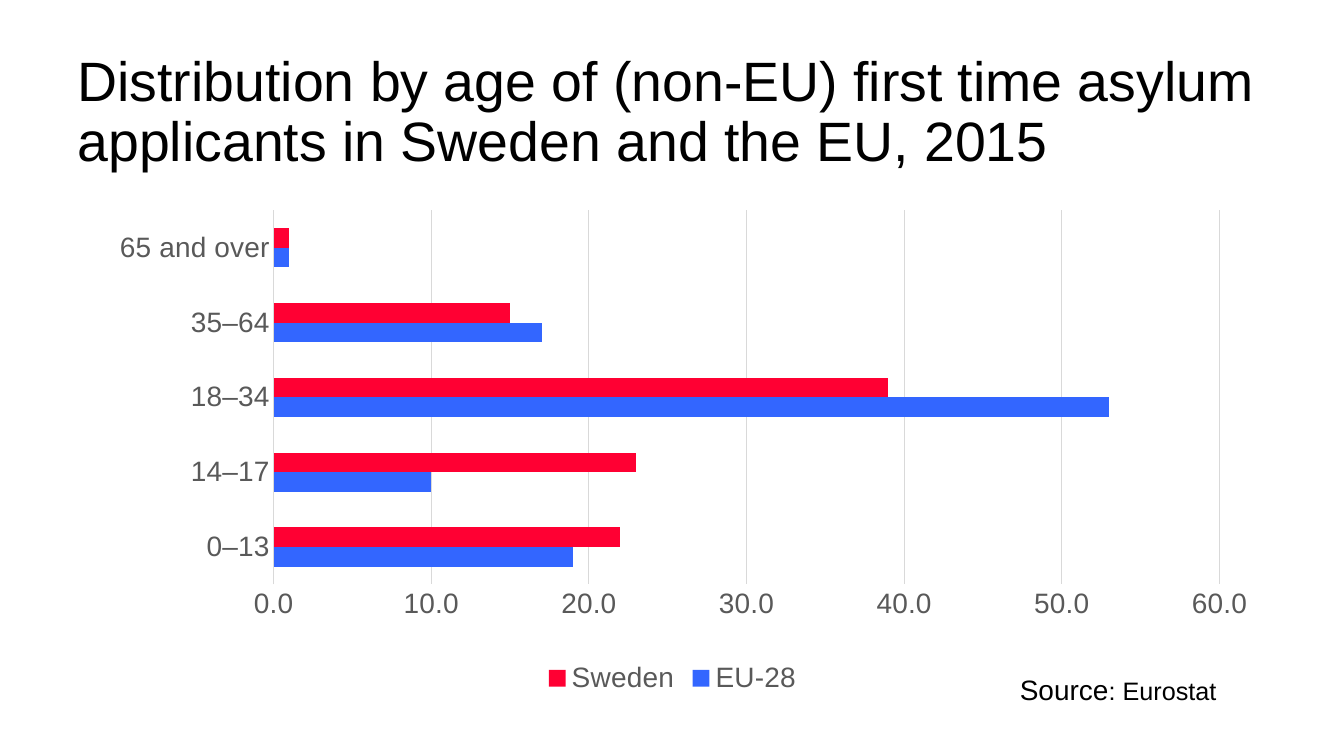
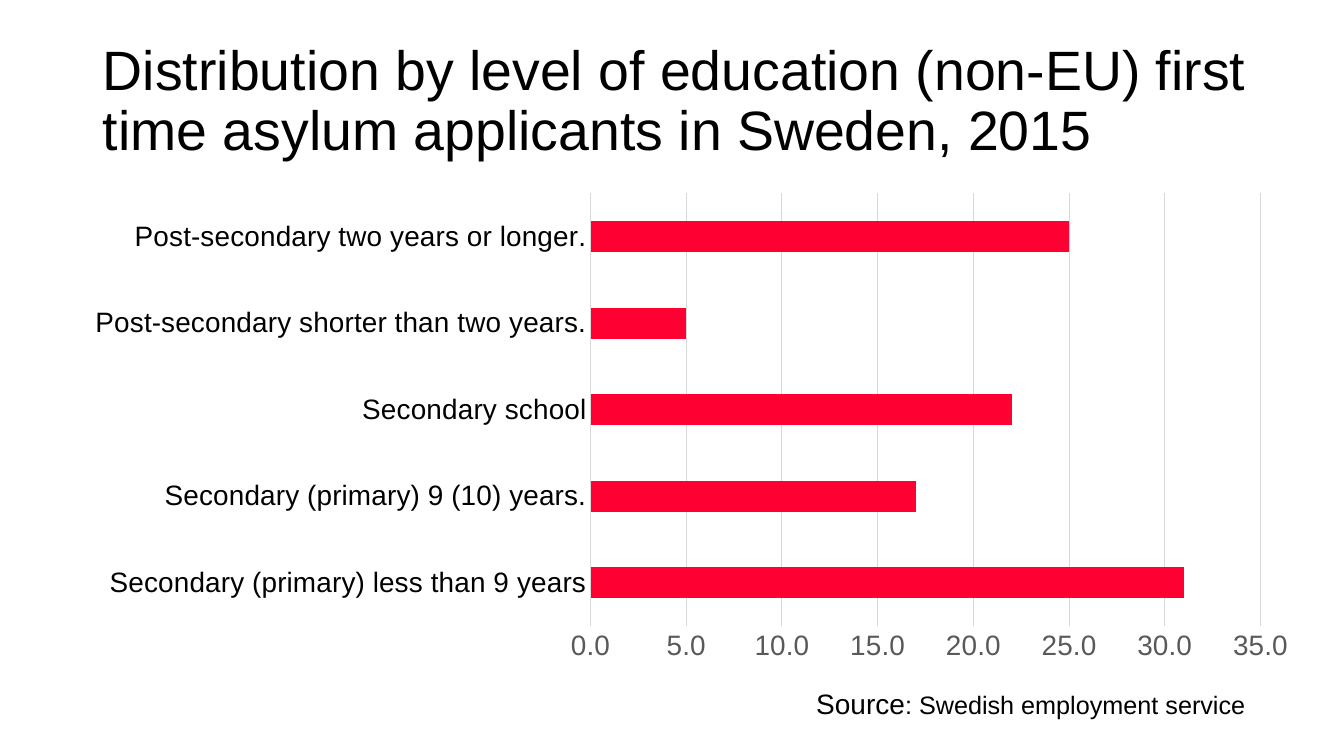
from lxml.etree import SubElement
from pptx import Presentation
from pptx.chart.data import CategoryChartData
from pptx.dml.color import RGBColor
from pptx.enum.chart import XL_CHART_TYPE, XL_LEGEND_POSITION, XL_TICK_MARK
from pptx.enum.text import MSO_ANCHOR, MSO_AUTO_SIZE, PP_ALIGN
from pptx.oxml.ns import qn
from pptx.util import Cm, Pt


def rgb(value):
    return RGBColor.from_string(value)


class Deck:
    FONT = "Arial"
    BLACK = "000000"
    GREY = "595959"
    GRID = "D9D9D9"
    RED = "FF0033"
    BLUE = "3366FF"
    TITLE_SIZE = 39.6
    LABEL_SIZE = 20
    SOURCE_SIZE = 18

    def __init__(self):
        self.presentation = Presentation()
        self.presentation.slide_width = Cm(33.87)
        self.presentation.slide_height = Cm(19.05)
        self.slide = None

    def style(self, font, size, color):
        font.name = self.FONT
        font.size = Pt(size)
        font.color.rgb = rgb(color)

    def add_slide(self):
        title_only = self.presentation.slide_layouts[5]
        self.slide = self.presentation.slides.add_slide(title_only)

    def title(self, wording, left, top, width):
        heading = self.slide.shapes.title
        heading.left, heading.top = Cm(left), Cm(top)
        heading.width, heading.height = Cm(width), Cm(3.68)
        frame = heading.text_frame
        frame.text = wording
        frame.word_wrap = True
        frame.auto_size = MSO_AUTO_SIZE.NONE
        frame.vertical_anchor = MSO_ANCHOR.MIDDLE
        paragraph = frame.paragraphs[0]
        paragraph.alignment = PP_ALIGN.LEFT
        paragraph.line_spacing = 0.9
        self.style(paragraph.runs[0].font, self.TITLE_SIZE, self.BLACK)

    def source(self, publisher, left, top, width):
        box = self.slide.shapes.add_textbox(Cm(left), Cm(top), Cm(width), Cm(1.12))
        frame = box.text_frame
        frame.word_wrap = True
        frame.auto_size = MSO_AUTO_SIZE.SHAPE_TO_FIT_TEXT
        paragraph = frame.paragraphs[0]
        for wording, size in (
            ("Source", self.LABEL_SIZE),
            (f": {publisher}", self.SOURCE_SIZE),
        ):
            run = paragraph.add_run()
            run.text = wording
            self.style(run.font, size, self.BLACK)

    def bar_chart(self, kind, place, categories, series, plot, maximum, step, label_color):
        data = CategoryChartData(number_format="0.0")
        data.categories = categories
        for name, values, _ in series:
            data.add_series(name, values)
        lengths = [Cm(length) for length in place]
        chart = self.slide.shapes.add_chart(kind, *lengths, data).chart
        self.style(chart.font, 10, self.BLACK)
        chart.has_title = False

        bars = chart.plots[0]
        bars.gap_width = 182
        bars.vary_by_categories = False
        for bar, (_, _, color) in zip(bars.series, series):
            bar.format.fill.solid()
            bar.format.fill.fore_color.rgb = rgb(color)

        self.axes(chart, maximum, step, label_color)
        self.plot_area(chart, plot)
        self.legend(chart, len(series) > 1)

    def axes(self, chart, maximum, step, label_color):
        groups, scale = chart.category_axis, chart.value_axis
        for axis, color in ((groups, label_color), (scale, self.GREY)):
            axis.major_tick_mark = XL_TICK_MARK.NONE
            axis.minor_tick_mark = XL_TICK_MARK.NONE
            self.style(axis.tick_labels.font, self.LABEL_SIZE, color)
        groups.has_major_gridlines = False
        scale.has_major_gridlines = True
        for line in (groups.format.line, scale.major_gridlines.format.line):
            line.color.rgb = rgb(self.GRID)
            line.width = Pt(0.75)
        scale.format.line.fill.background()
        scale.minimum_scale = 0
        scale.maximum_scale = maximum
        scale.major_unit = step
        scale.tick_labels.number_format = "0.0"
        scale.tick_labels.number_format_is_linked = False

    def plot_area(self, chart, plot):
        area = chart.element.find(f".//{qn('c:plotArea')}")
        for automatic in area.findall(qn("c:layout")):
            area.remove(automatic)
        layout = SubElement(area, qn("c:layout"))
        area.insert(0, layout)
        manual = SubElement(layout, qn("c:manualLayout"))
        settings = [("layoutTarget", "inner"), ("xMode", "edge"), ("yMode", "edge")]
        settings += zip("xywh", plot)
        for tag, value in settings:
            SubElement(manual, qn(f"c:{tag}")).set("val", str(value))

    def legend(self, chart, shown):
        chart.has_legend = shown
        if shown:
            chart.legend.position = XL_LEGEND_POSITION.BOTTOM
            chart.legend.include_in_layout = False
            self.style(chart.legend.font, self.LABEL_SIZE, self.GREY)


def age_slide(deck):
    deck.add_slide()
    deck.title(
        "Distribution by age of (non-EU) first time asylum applicants "
        "in Sweden and the EU, 2015",
        1.7, 1.02, 31.88,
    )
    deck.bar_chart(
        XL_CHART_TYPE.BAR_CLUSTERED,
        place=(2.34, 5.08, 29.21, 12.55),
        categories=["0–13", "14–17", "18–34", "35–64", "65 and over"],
        series=[
            ("EU-28", (19, 10, 53, 17, 1), deck.BLUE),
            ("Sweden", (22, 23, 39, 15, 1), deck.RED),
        ],
        plot=(0.156, 0.018, 0.816, 0.751),
        maximum=60,
        step=10,
        label_color=deck.GREY,
    )
    deck.source("Eurostat", 25.45, 16.81, 6.07)


def education_slide(deck):
    deck.add_slide()
    deck.title(
        "Distribution by level of education (non-EU) first time asylum "
        "applicants in Sweden, 2015",
        2.34, 0.74, 30.84,
    )
    deck.bar_chart(
        XL_CHART_TYPE.BAR_STACKED,
        place=(1.98, 4.65, 30.48, 12.55),
        categories=[
            "Secondary (primary) less than 9 years",
            "Secondary (primary) 9 (10) years.",
            "Secondary school",
            "Post-secondary shorter than two years.",
            "Post-secondary two years or longer.",
        ],
        series=[("Series 1", (31, 17, 22, 5, 25), deck.RED)],
        plot=(0.425, 0.018, 0.556, 0.869),
        maximum=35,
        step=5,
        label_color=deck.BLACK,
    )
    deck.source("Swedish employment service", 20.32, 17.17, 11.61)


def main():
    deck = Deck()
    age_slide(deck)
    education_slide(deck)
    deck.presentation.save("out.pptx")


if __name__ == "__main__":
    main()
